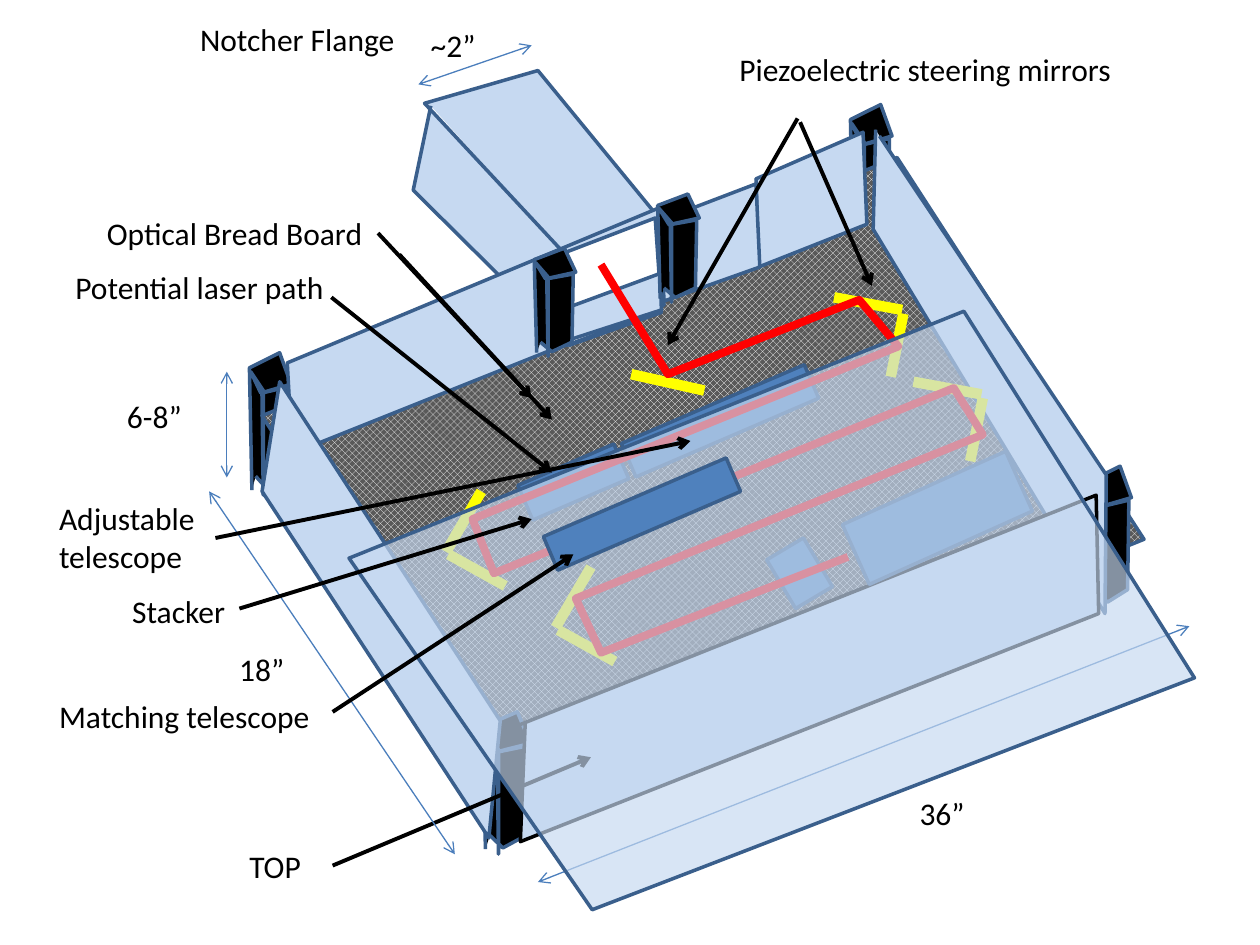
from pptx import Presentation
from pptx.dml.color import RGBColor
from pptx.enum.dml import MSO_PATTERN
from pptx.enum.shapes import MSO_CONNECTOR, MSO_SHAPE
from pptx.enum.text import MSO_AUTO_SIZE
from pptx.oxml.ns import qn
from pptx.oxml.xmlchemy import OxmlElement
from pptx.util import Inches, Pt

CHECKER = MSO_PATTERN.LARGE_CHECKER_BOARD
STRAIGHT = MSO_CONNECTOR.STRAIGHT
RECT = MSO_SHAPE.RECTANGLE
GROW = MSO_AUTO_SIZE.SHAPE_TO_FIT_TEXT
COLORS = {
    "black": "000000", "white": "FFFFFF", "board": "595959", "glass": "C6D9F1",
    "edge": "3A5F8C", "optic": "4F81BD", "dimension": "4B7EBC",
    "mirror": "FFFF00", "laser": "FF0000",
}
RGB = {name: RGBColor.from_string(value) for name, value in COLORS.items()}
POST_POINTS = [(.02, 1.09), (0, .12), (.24, 0), (.33, .25), (.09, .32), (.01, .15),
               (.11, .3), (.11, 1.13), (.1, .32), (.31, .27), (.3, .98),
               (.14, 1.08), (.05, .98)]


def post(left, top, width=0.33, height=1.13):
    """Outline of a corner post, stretched to the given box."""
    points = [(left + x * width / 0.33, top + y * height / 1.13) for x, y in POST_POINTS]
    return points, "black", "edge", 2


def panel(*points, fill="glass", line="edge", weight=2):
    """Outline through the points, closed when the last repeats the first."""
    return points, fill, line, weight


# Mirror pairs: two strokes of a corner, repeated at an offset
left_pair = [(3.82, 3.9, 3.54, 4.38), (3.56, 4.4, 4.01, 4.65)]
right_pair = [(7.25, 3.03, 7.79, 3.13), (7.8, 3.16, 7.7, 3.66)]
mirrors = [(x1 + dx, y1 + dy, x2 + dx, y2 + dy)
           for pair, offsets in ((left_pair, [(0, 0), (.87, .6)]),
                                 (right_pair, [(0, 0), (-.63, -.67)]))
           for dx, dy in offsets for x1, y1, x2, y2 in pair]
mirrors.append((5.01, 2.97, 5.59, 3.1))

box_layer = {
    "outlines": [
        post(6.75, 0.83),
        post(1.98, 2.8),
        panel((2.08, 3.3), (7.12, 1.25), (9.08, 4.28), (4.02, 6.33), (2.08, 3.3),
              fill="board"),
        post(3.83, 5.65, 0.38),
        post(8.65, 3.7),
        panel((6.98, 1.08), (8.78, 3.77), (8.77, 4.87), (6.93, 1.82), (6.95, 1.03)),
        panel((4.08, 5.77), (8.7, 3.93), (8.72, 4.87), (4.13, 6.68), (4.17, 5.72),
              line="black"),
        panel((4.45, 1.98), (3.37, .82), (4.27, .56), (5.23, 1.73), (5.25, 2.48),
              (4.52, 2.74), (3.28, 1.51), (3.42, .84)),
        panel((5.23, 1.65), (5.27, 2.42), (2.32, 3.6), (2.28, 2.88), (5.23, 1.65)),
        panel((2.22, 3.03), (3.97, 5.72), (3.88, 6.65), (2.08, 3.9), (2.22, 3.03)),
        panel((6.85, 1.05), (6, 1.42), (6.02, 2.12), (6.88, 1.78), (6.85, 1.05)),
        panel((4.47, 2.01), (4.5, 2.74), (5.25, 2.46), (5.2, 1.73), (4.47, 2.01),
              fill="white"),
        panel((5.24, 1.75), (6, 1.46), (6.03, 2.12), (5.27, 2.39), (5.24, 1.75)),
        panel((4.51, 2.44), (5.24, 2.17), (5.25, 2.46), (4.54, 2.69), (4.51, 2.44)),
    ],
    "optics": [(6.73, 3.85, 1.42, .52, 335.8), (5.57, 2.55, .29, 1.58, 246.7),
               (6.12, 4.38, .45, .34, 59.2), (4.4, 3.41, .3, .83, 246.7)],
    "mirrors": mirrors,
    "pointers": [(3, 1.85, 4.22, 3.16), (3.17, 2.02, 4.38, 3.33),
                 (2.63, 2.36, 4.38, 3.75), (2.64, 6.87, 4.69, 6.01)],
    "dimensions": [(4.27, 7, 9.44, 4.97), (1.66, 3.9, 3.61, 6.78),
                   (1.8, 2.95, 1.8, 3.79), (4.22, .36, 3.32, .67)],
    "labels": [
        ("Notcher Flange", 1.49, .11, 1.76, .4),
        ("Optical Bread Board", .75, 1.65, 2.25, .4),
        ("Potential laser path", .5, 2.08, 2.33, .4),
        ("18”", 1.8, 5.11, .56, .4),
        ("36”", 7.2, 6.25, .56, .4),
        ("6-8”", .91, 3.1, .64, .4),
        ("TOP", 1.88, 6.67, .61, .4),
        ("~2”", 3.32, .16, .56, .4),
        ("Matching telescope", .37, 5.48, 2.21, .4),
        ("Stacker", .95, 4.65, .95, .4),
        ("Adjustable\ntelescope", .37, 3.91, 1.35, .71),
        ("Piezoelectric steering mirrors", 5.77, .35, 3.18, .4),
    ],
}
lid_layer = {
    "outlines": [
        panel((6.73, 4.42), (4.77, 5.18), (4.57, 4.75), (7.8, 3.45), (7.57, 3.08),
              (3.92, 4.55), (3.75, 4.12), (7.13, 2.75), (6.82, 2.38), (5.3, 2.97),
              (4.77, 2.1), fill=None, line="laser", weight=4.5),
        panel((2.77, 4.43), (7.65, 2.47), (9.48, 5.38), (4.7, 7.22), (2.77, 4.43),
              fill="lid"),
    ],
}
callout_layer = {
    "optics": [(4.95, 3.29, .29, 1.58, 246.7)],
    "pointers": [(1.71, 4.27, 5.48, 3.5), (1.9, 4.83, 4.22, 4.12),
                 (2.64, 5.65, 4.55, 4.4), (6.35, .97, 6.92, 2.27),
                 (6.33, .94, 5.3, 2.74)],
}
front_layer = {"outlines": [post(4.24, 1.97, height=0.86), post(5.22, 1.54, height=0.86)]}

# Colour, weight and arrowheads of each kind of straight line
LINE_STYLES = {
    "mirrors": ("mirror", 6, ()),
    "pointers": ("black", 2.25, ("a:tailEnd",)),
    "dimensions": ("dimension", 0.75, ("a:headEnd", "a:tailEnd")),
}

prs = Presentation()
prs.slide_width, prs.slide_height = Inches(10), Inches(7.5)
s = prs.slides.add_slide(prs.slide_layouts[6])

for layer in (box_layer, lid_layer, callout_layer, front_layer):
    for points, fill, line, weight in layer.get("outlines", []):
        corners = [(Inches(x), Inches(y)) for x, y in points]
        builder = s.shapes.build_freeform(*corners[0])
        builder.add_line_segments(corners[1:], close=points[0] == points[-1])
        sp = builder.convert_to_shape()
        sp.shadow.inherit = False
        sp.line.color.rgb = RGB[line]
        sp.line.width = Pt(weight)
        if fill is None:
            sp.fill.background()
        elif fill == "board":
            sp.fill.patterned()
            sp.fill.pattern = CHECKER
            sp.fill.fore_color.rgb = RGB["white"]
            sp.fill.back_color.rgb = RGB["board"]
        else:
            sp.fill.solid()
            sp.fill.fore_color.rgb = RGB["glass" if fill == "lid" else fill]
        if fill == "lid":
            alpha = OxmlElement("a:alpha")
            alpha.set("val", "67000")
            sp._element.spPr.find(qn("a:solidFill")).find(qn("a:srgbClr")).append(alpha)

    for *box, angle in layer.get("optics", []):
        sp = s.shapes.add_shape(RECT, *map(Inches, box))
        sp.rotation = angle
        sp.shadow.inherit = False
        sp.fill.solid()
        sp.fill.fore_color.rgb = RGB["optic"]
        sp.line.color.rgb = RGB["edge"]
        sp.line.width = Pt(2)

    for kind, (color, weight, ends) in LINE_STYLES.items():
        for ends_at in layer.get(kind, []):
            c = s.shapes.add_connector(STRAIGHT, *map(Inches, ends_at))
            c.line.color.rgb = RGB[color]
            c.line.width = Pt(weight)
            spPr = c._element.spPr
            for end in ends:
                arrow = OxmlElement(end)
                arrow.set("type", "arrow")
                spPr.find(qn("a:ln")).append(arrow)
            spPr.append(OxmlElement("a:effectLst"))

    for text, *box in layer.get("labels", []):
        tf = s.shapes.add_textbox(*map(Inches, box)).text_frame
        tf.word_wrap = False
        tf.auto_size = GROW
        tf.text = text
        for p in tf.paragraphs:
            font = p.runs[0].font
            for name, value in {"name": "Calibri", "size": Pt(18)}.items():
                setattr(font, name, value)
            font.color.rgb = RGB["black"]

prs.save("out.pptx")
